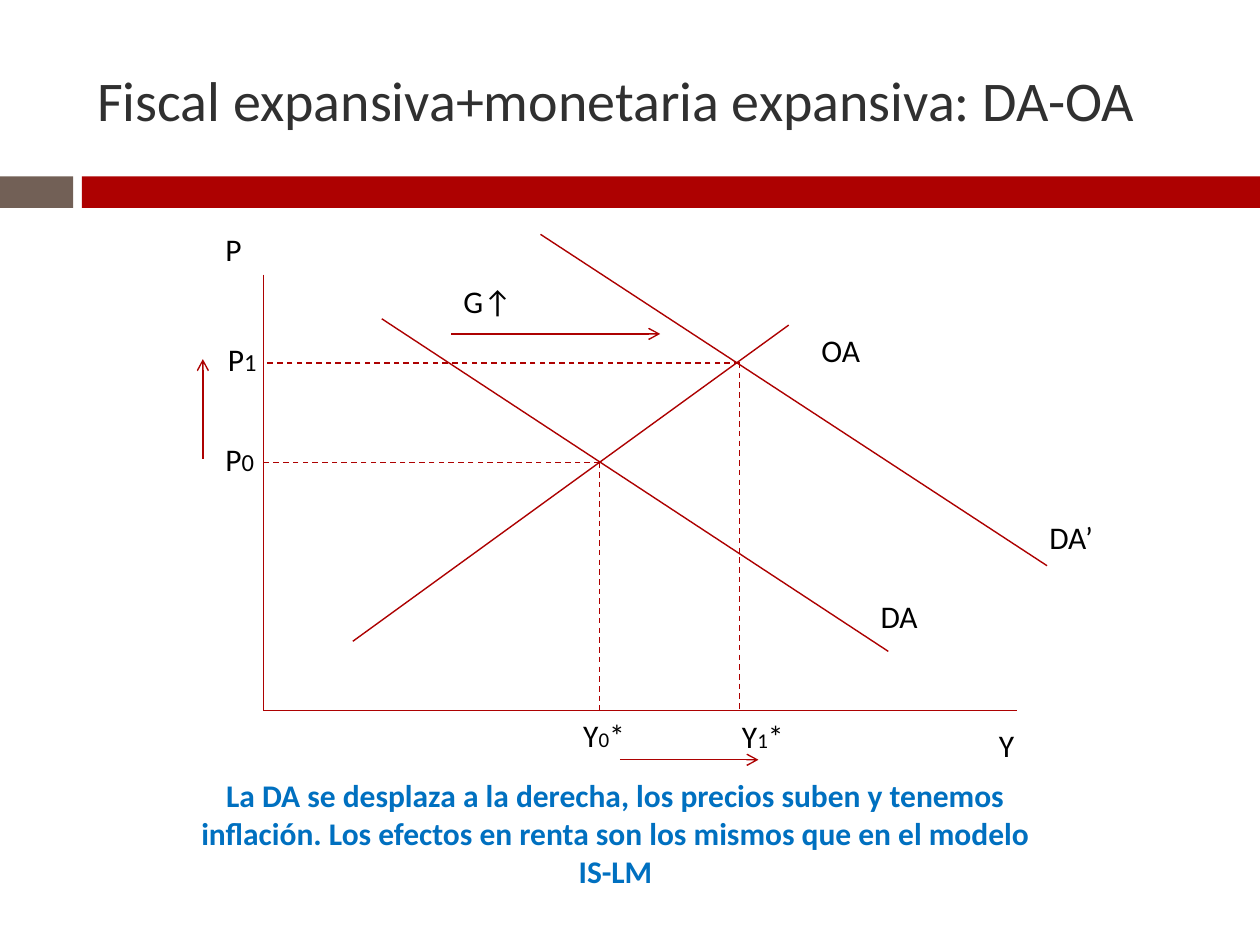
from lxml import etree
from pptx import Presentation
from pptx.dml.color import RGBColor
from pptx.enum.dml import MSO_LINE
from pptx.enum.shapes import MSO_CONNECTOR, MSO_SHAPE
from pptx.enum.text import MSO_ANCHOR, PP_ALIGN
from pptx.oxml.ns import qn
from pptx.util import Inches, Pt

STRAIGHT = MSO_CONNECTOR.STRAIGHT
RECT = MSO_SHAPE.RECTANGLE
DASH = MSO_LINE.DASH
LEFT, CENTER = PP_ALIGN.LEFT, PP_ALIGN.CENTER
MIDDLE = MSO_ANCHOR.MIDDLE

COLORS = {"red": "AD0101", "brown": "726056", "title": "303030",
          "blue": "0070C0", "black": "000000"}
FONT = "Calibri"

prs = Presentation()
prs.slide_width, prs.slide_height = Inches(10), Inches(7.5)
s = prs.slides.add_slide(prs.slide_layouts[5])


def add_line(x1, y1, x2, y2, dashed=False, arrow=False):
    line = s.shapes.add_connector(STRAIGHT, Inches(x1), Inches(y1),
                                  Inches(x2), Inches(y2))
    line.line.color.rgb = RGBColor.from_string(COLORS["red"])
    line.line.width = Pt(0.79)
    if dashed:
        line.line.dash_style = DASH
    if arrow:
        etree.SubElement(line.line._get_or_add_ln(), qn("a:tailEnd"), type="arrow")
    etree.SubElement(line._element.spPr, qn("a:effectLst"))


def add_text(x, y, w, h, runs, color="black", bold=False, align=LEFT):
    tf = s.shapes.add_textbox(Inches(x), Inches(y), Inches(w), Inches(h)).text_frame
    tf.word_wrap = True
    p = tf.paragraphs[0]
    p.alignment = align
    for text, size in runs:
        r = p.add_run()
        r.text = text
        r.font.name, r.font.size, r.font.bold = FONT, Pt(size), bold
        r.font.color.rgb = RGBColor.from_string(COLORS[color])


# Band under the title
for x, w, color in [(0, 0.58, "brown"), (0.65, 9.35, "red")]:
    sp = s.shapes.add_shape(RECT, Inches(x), Inches(1.4), Inches(w), Inches(0.25))
    sp.shadow.inherit = False
    sp.fill.solid()
    sp.fill.fore_color.rgb = RGBColor.from_string(COLORS[color])
    sp.line.fill.background()

# Title
title = s.shapes.title
title.left, title.top = Inches(0.67), Inches(0.25)
title.width, title.height = Inches(8.92), Inches(1.08)
tf = title.text_frame
tf.text = "Fiscal expansiva+monetaria expansiva: DA-OA"
tf.vertical_anchor = MIDDLE
p = tf.paragraphs[0]
p.alignment = LEFT
r = p.runs[0]
r.font.name, r.font.size = FONT, Pt(32)
r.font.color.rgb = RGBColor.from_string(COLORS["title"])

# Axes
origin_x, origin_y = 2.09, 5.64
add_line(origin_x, 2.18, origin_x, origin_y)
add_line(origin_x, origin_y, 8.07, origin_y)

# Curves OA, DA and DA’
add_line(2.8, 5.09, 6.26, 2.58)
add_line(3.03, 2.53, 7.05, 5.17)
add_line(4.29, 1.86, 8.31, 4.49)

# Dashed guides from each equilibrium to both axes
for x, y in [(4.76, 3.67), (5.87, 2.88)]:
    add_line(x, y, origin_x, y, dashed=True)
    add_line(x, y, x, origin_y, dashed=True)

# Arrows: demand shift, price rise, income rise
for ends in [(3.58, 2.65, 5.24, 2.65), (1.61, 3.64, 1.61, 2.85),
             (4.92, 6.03, 6.02, 6.03)]:
    add_line(*ends, arrow=True)

# Labels
for x, y, w, runs in [
    (1.69, 1.78, 0.63, [("P", 18)]),
    (7.83, 5.71, 0.47, [("Y", 18)]),
    (6.42, 2.58, 1.02, [("OA", 18)]),
    (6.89, 4.69, 1.5, [("DA", 18)]),
    (8.23, 4.06, 1.5, [("DA’", 18)]),
    (3.58, 2.19, 1.73, [("G↑", 18)]),
    (1.71, 2.65, 0.63, [("P", 18), ("1", 14)]),
    (1.69, 3.44, 0.63, [("P", 18), ("0", 14)]),
    (4.53, 5.63, 0.79, [("Y", 18), ("0", 12), ("*", 18)]),
    (5.79, 5.64, 0.79, [("Y", 18), ("1", 12), ("*", 18)]),
]:
    add_text(x, y, w, 0.4, runs)

# Conclusion
add_text(1.46, 6.11, 6.85, 1.01,
         [("La DA se desplaza a la derecha, los precios suben y tenemos inflación. "
           "Los efectos en renta son los mismos que en el modelo IS-LM", 18)],
         color="blue", bold=True, align=CENTER)

prs.save("out.pptx")
